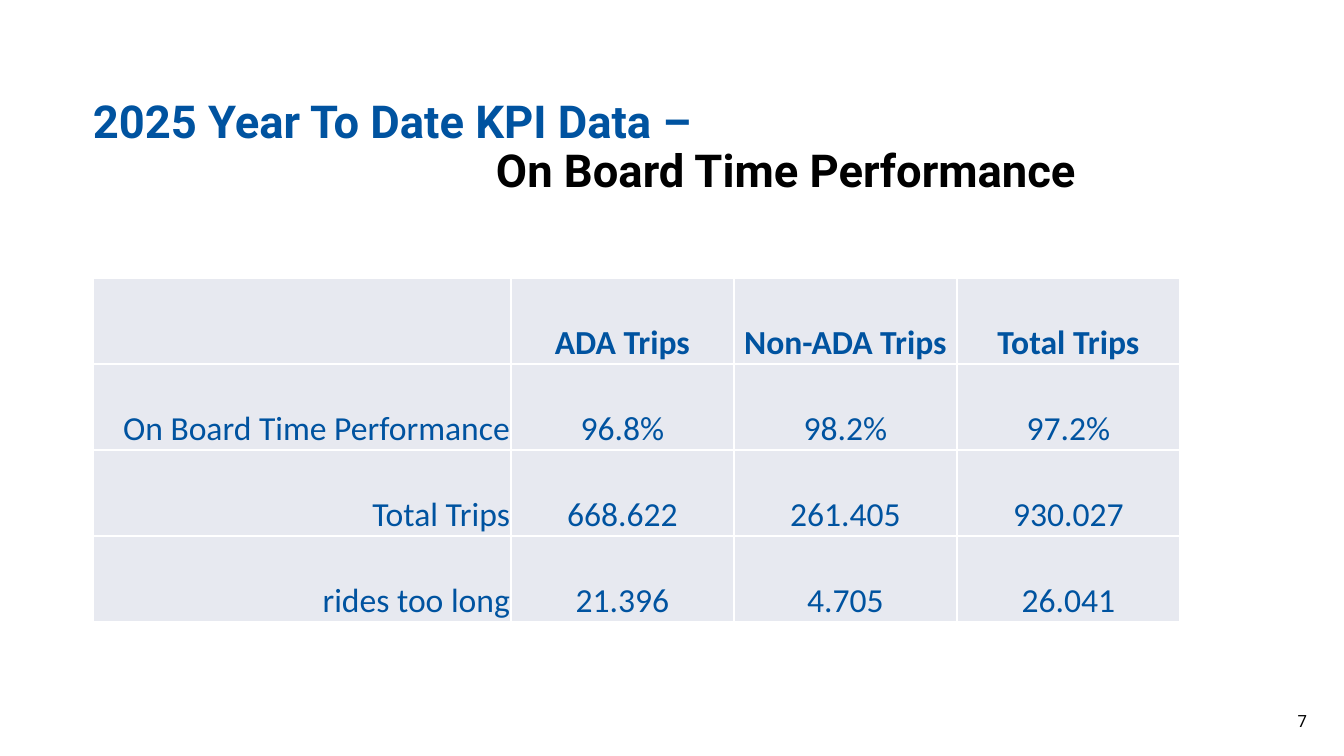
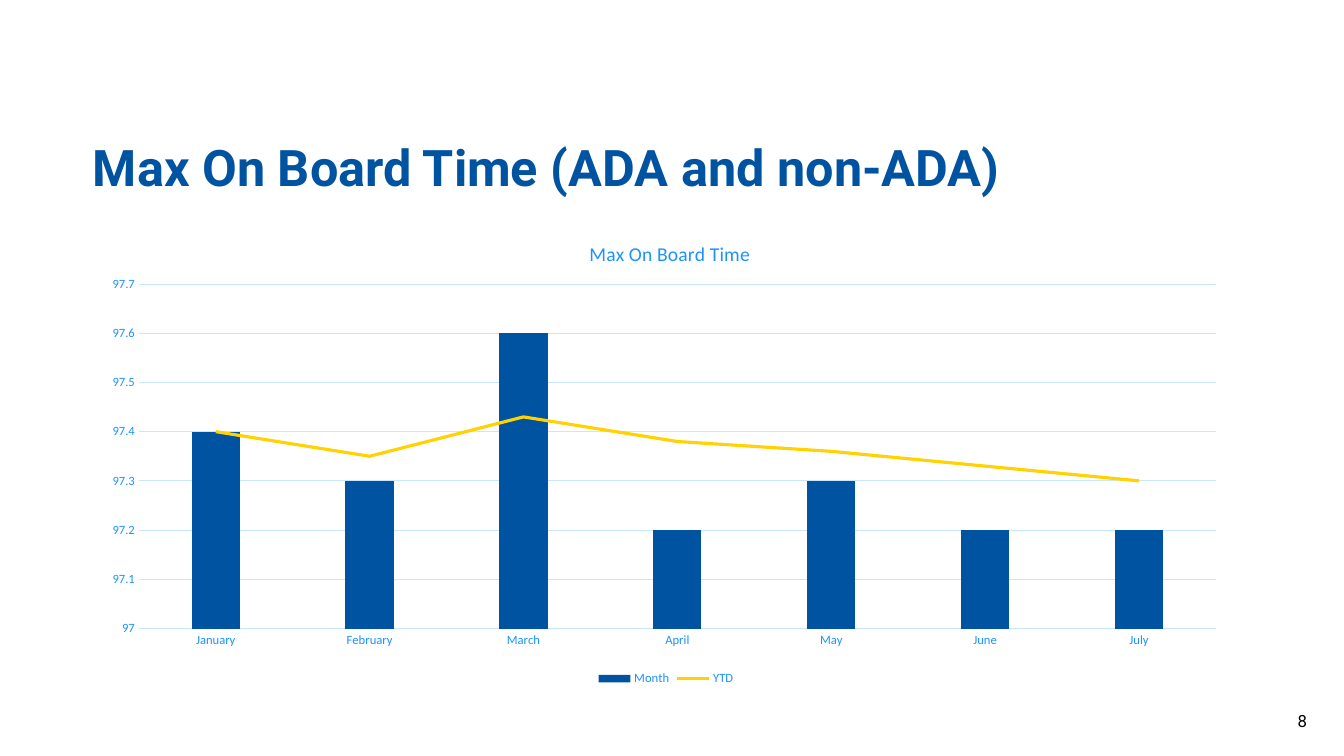
from copy import deepcopy

from lxml import etree
from pptx import Presentation
from pptx import util as u
from pptx.chart.data import CategoryChartData
from pptx.dml.color import RGBColor
from pptx.enum import chart as ch
from pptx.enum import text as tx
from pptx.oxml import parse_xml
from pptx.oxml.ns import nsdecls, qn

EMU_PER_PX = 914400 / 100.8
SLIDE_W, SLIDE_H = 1344, 756

BLUE = RGBColor(0x00, 0x53, 0xA0)
BRIGHT_BLUE = RGBColor(0x1C, 0x92, 0xFF)
GRID_BLUE = RGBColor(0xCA, 0xE6, 0xFF)
YELLOW = RGBColor(0xFF, 0xD2, 0x00)
CELL_GREY = RGBColor(0xE7, 0xE9, 0xF0)
WHITE = RGBColor(0xFF, 0xFF, 0xFF)
BLACK = RGBColor(0x00, 0x00, 0x00)

HEAD_FONT, DATA_FONT = "Roboto", "Calibri"

# Boxes: left, top, width, height
TITLE_BOX = (93, 68, 1166, 134)
NUMBER_BOX = (1146, 701, 161, 40)
TABLE_BOX = (93, 278, 1087, 344)
CHART_BOX = (93, 218, 1146, 472)

KPI_ROWS = [
    ("", "ADA Trips", "Non-ADA Trips", "Total Trips"),
    ("On Board Time Performance", "96.8%", "98.2%", "97.2%"),
    ("Total Trips", "668.622", "261.405", "930.027"),
    ("rides too long", "21.396", "4.705", "26.041"),
]
MONTHS = ("January", "February", "March", "April", "May", "June", "July")
MONTH_VALUES = (97.4, 97.3, 97.6, 97.2, 97.3, 97.2, 97.2)
YTD_VALUES = (97.4, 97.35, 97.43, 97.38, 97.36, 97.33, 97.3)


def px(length):
    return u.Emu(round(length * EMU_PER_PX))


def set_font(font, size, color, name, bold=False):
    font.size, font.name, font.bold = u.Pt(size), name, bold
    font.color.rgb = color


def set_insets(frame, left, top, right, bottom):
    frame.margin_left, frame.margin_top = px(left), px(top)
    frame.margin_right, frame.margin_bottom = px(right), px(bottom)


# Parts shared by the slides
def add_slide(prs, number, title_lines, size):
    """title_lines holds (wording, colour, indent) for each line."""
    slide = prs.slides.add_slide(prs.slide_layouts[5])
    title = slide.shapes.title
    title.left, title.top, title.width, title.height = map(px, TITLE_BOX)
    frame = title.text_frame
    frame.text = "\n".join(wording for wording, _, _ in title_lines)
    frame.auto_size = tx.MSO_AUTO_SIZE.NONE
    frame.vertical_anchor = tx.MSO_ANCHOR.BOTTOM
    set_insets(frame, 0, 40, 0, 5)
    for paragraph, (_, color, indent) in zip(frame.paragraphs, title_lines):
        paragraph.alignment = tx.PP_ALIGN.LEFT
        paragraph.line_spacing = 0.9
        paragraph.space_before = u.Pt(0)
        paragraph._p.get_or_add_pPr().set("marL", str(px(indent)))
        set_font(paragraph.runs[0].font, size, color, HEAD_FONT, True)

    page = slide.shapes.add_textbox(*map(px, NUMBER_BOX)).text_frame
    page.word_wrap = True
    page.text = str(number)
    page.vertical_anchor = tx.MSO_ANCHOR.MIDDLE
    set_insets(page, 10, 5, 0, 5)
    page.paragraphs[0].alignment = tx.PP_ALIGN.RIGHT
    set_font(page.paragraphs[0].runs[0].font, 12, BLACK, HEAD_FONT)
    return slide


# KPI table
def set_borders(cell):
    for side in ("lnL", "lnR", "lnT", "lnB"):
        cell._tc.get_or_add_tcPr().append(parse_xml(
            f'<a:{side} {nsdecls("a")} w="12700"><a:solidFill>'
            f'<a:srgbClr val="{WHITE}"/></a:solidFill></a:{side}>'))


def add_kpi_table(slide, box):
    width, height = box[2:]
    row_count, col_count = len(KPI_ROWS), len(KPI_ROWS[0])
    table = slide.shapes.add_table(row_count, col_count, *map(px, box)).table
    table.first_row = table.horz_banding = False
    value_width = 223
    label_width = width - value_width * (col_count - 1)
    for col, column in enumerate(table.columns):
        column.width = px(value_width if col else label_width)
    for row in table.rows:
        row.height = px(height / row_count)

    for r, row in enumerate(KPI_ROWS):
        for c, wording in enumerate(row):
            cell = table.cell(r, c)
            set_borders(cell)
            cell.fill.solid()
            cell.fill.fore_color.rgb = CELL_GREY
            cell.vertical_anchor = tx.MSO_ANCHOR.BOTTOM
            set_insets(cell, 1, 1, 1, 0)
            cell.text = wording
            paragraph = cell.text_frame.paragraphs[0]
            paragraph.alignment = tx.PP_ALIGN.CENTER if c else tx.PP_ALIGN.RIGHT
            for run in paragraph.runs:
                set_font(run.font, 24, BLUE, DATA_FONT, r == 0)


# Monthly chart
def place_in_chart(element, index, **fractions):
    """Give a chart part a manual layout, as fractions of the chart."""
    for old in element.findall(qn("c:layout")):
        element.remove(old)
    layout = etree.Element(qn("c:layout"))
    manual = etree.SubElement(layout, qn("c:manualLayout"))
    settings = {"xMode": "edge", "yMode": "edge", **fractions}
    if "w" in fractions:
        settings = {"layoutTarget": "inner", **settings}
    for tag, value in settings.items():
        etree.SubElement(manual, qn(f"c:{tag}")).set("val", str(value))
    element.insert(index, layout)


def turn_last_series_into_line(chart):
    bars = chart.plots[0]._element
    series = bars.findall(qn("c:ser"))[-1]
    for flag in series.findall(qn("c:invertIfNegative")):
        series.remove(flag)
    lines = parse_xml(
        f'<c:lineChart {nsdecls("c")}><c:grouping val="standard"/>'
        '<c:varyColors val="0"/><c:marker val="1"/></c:lineChart>')
    lines.insert(2, series)
    for axis_id in bars.findall(qn("c:axId")):
        lines.append(deepcopy(axis_id))
    bars.addnext(lines)


def add_time_chart(slide, box):
    data = CategoryChartData(number_format="General")
    data.categories = MONTHS
    data.add_series("Month", MONTH_VALUES)
    data.add_series("YTD", YTD_VALUES)
    chart = slide.shapes.add_chart(
        ch.XL_CHART_TYPE.COLUMN_CLUSTERED, *map(px, box), data).chart
    set_font(chart.font, 10, BLUE, DATA_FONT)
    turn_last_series_into_line(chart)

    # Columns and line
    bars, lines = chart.plots
    bars.vary_by_categories = False
    bars.gap_width, bars.overlap = 219, -27
    month, ytd = bars.series[0], lines.series[0]
    month.format.fill.solid()
    month.format.fill.fore_color.rgb = BLUE
    ytd.format.line.color.rgb = YELLOW
    ytd.format.line.width = u.Pt(2.25)
    ytd.marker.style = ch.XL_MARKER_STYLE.NONE
    ytd.smooth = False

    # Axes
    months, values = chart.category_axis, chart.value_axis
    values.minimum_scale, values.maximum_scale = 97, 97.7
    values.major_unit = 0.1
    values.has_major_gridlines = True
    values.format.line.fill.background()
    for axis in (months, values):
        axis.major_tick_mark = axis.minor_tick_mark = ch.XL_TICK_MARK.NONE
        set_font(axis.tick_labels.font, 9, BRIGHT_BLUE, DATA_FONT)
    for line in (months.format.line, values.major_gridlines.format.line):
        line.color.rgb = GRID_BLUE
        line.width = u.Pt(0.75)

    # Heading and legend
    chart.has_title = True
    heading = chart.chart_title.text_frame
    heading.text = "Max On Board Time"
    set_font(heading.paragraphs[0].runs[0].font, 14, BRIGHT_BLUE, DATA_FONT)
    chart.has_legend = True
    chart.legend.position = ch.XL_LEGEND_POSITION.BOTTOM
    chart.legend.include_in_layout = False
    set_font(chart.legend.font, 9, BRIGHT_BLUE, DATA_FONT)

    place_in_chart(chart.chart_title._element, 1, x=0.43, y=0.04)
    place_in_chart(bars._element.getparent(), 0, x=0.04, y=0.14, w=0.94, h=0.73)


def main():
    prs = Presentation()
    prs.slide_width, prs.slide_height = px(SLIDE_W), px(SLIDE_H)

    kpi_slide = add_slide(prs, 7, [
        ("2025 Year To Date KPI Data –", BLUE, 0),
        ("On Board Time Performance", BLACK, 403)], 32.4)
    add_kpi_table(kpi_slide, TABLE_BOX)

    chart_slide = add_slide(
        prs, 8, [("Max On Board Time (ADA and non-ADA)", BLUE, 0)], 36)
    add_time_chart(chart_slide, CHART_BOX)

    prs.save("out.pptx")


if __name__ == "__main__":
    main()
